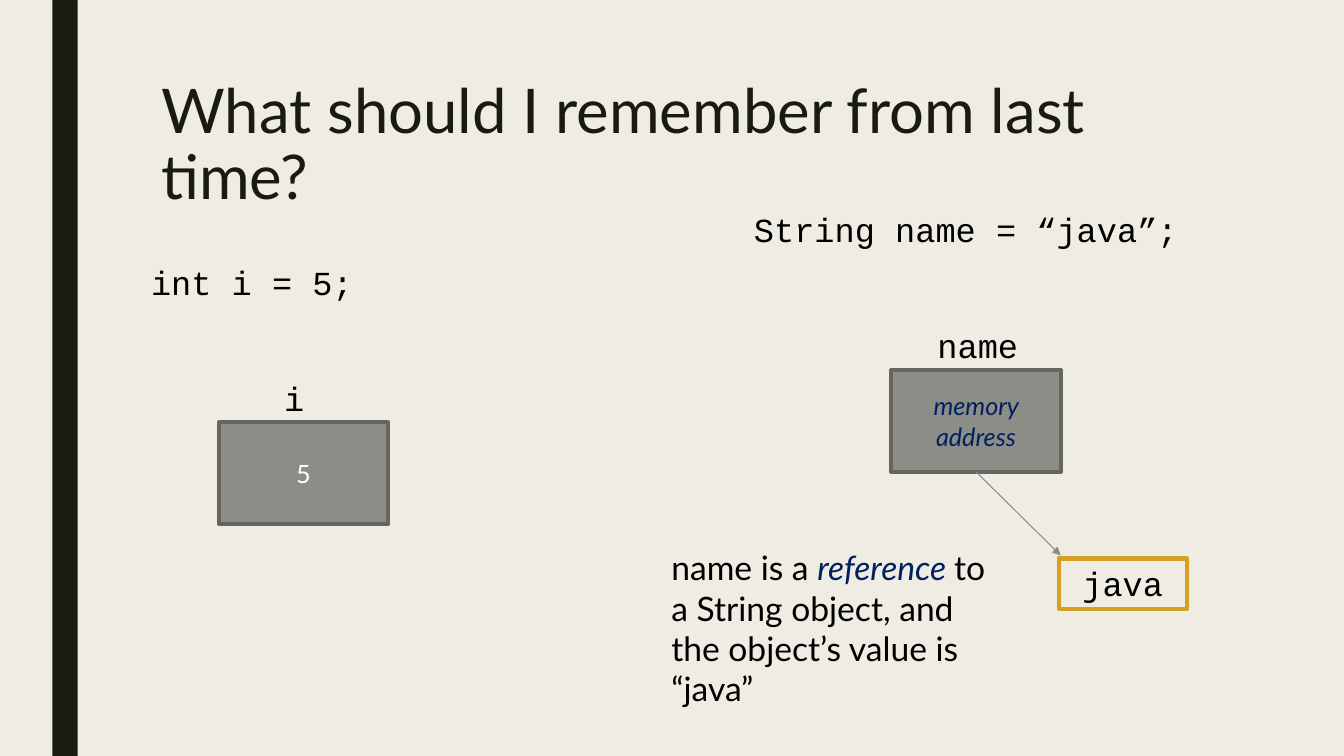
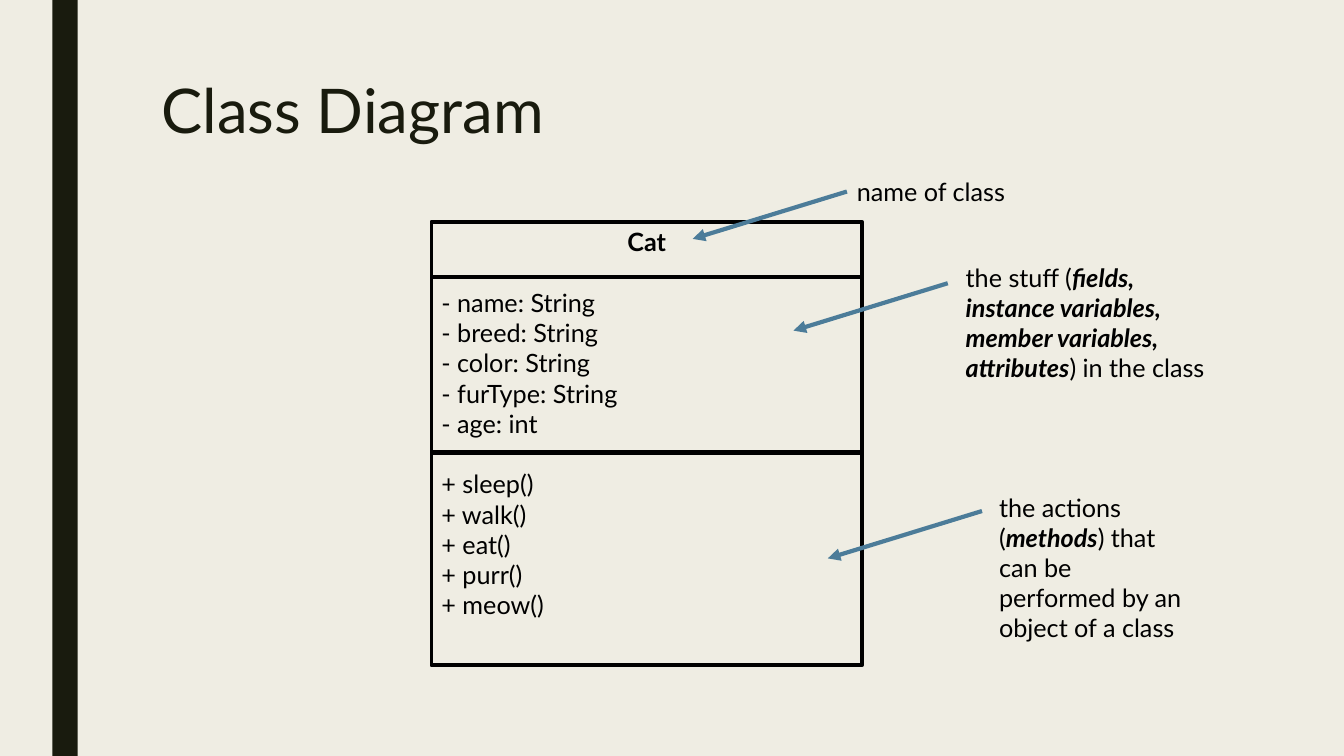
from lxml import etree
from pptx import Presentation
from pptx import util as u
from pptx.dml.color import RGBColor
from pptx.enum import shapes, text
from pptx.oxml.ns import qn

PX = 9144
SLIDE_W, SLIDE_H = 1333, 750
BAND = (52, 0, 25, SLIDE_H)
TITLE = (150, 75, 1050, 162)
SANS, MONO = "Lato", "Courier New"
C = {"paper": "EFEDE3", "dark": "191B0E", "gray": "8C8D86", "edge": "666661",
     "navy": "002060", "gold": "D7A023", "blue": "4C7C99",
     "black": "000000", "white": "FFFFFF"}

CODE_LABELS = [
    ("int i = 5;", (140, 255, 354, 50)),
    ("i", (272, 370, 354, 50)),
    ("name", (920, 317, 354, 50)),
    ("String name = “java”;", (738, 202, 466, 50)),
]
VALUE_BOX = (217, 419, 168, 101)
ADDRESS_BOX = (884, 367, 168, 101)
OBJECT_BOX = (1050, 554, 127, 50)
OBJECT_CORNER = (1052, 551)
REFERENCE_NOTE = (656, 538, 341, 131)
REFERENCE_RUNS = [("name is a ", ""), ("reference ", "i"),
                  ("to a String object, and the object’s value is “java”", "")]

CLASS_BOX = (428, 220, 427, 440)
DIVIDERS = [275, 449]
CLASS_NAME = "Cat"
MEMBERS = [
    ["- name: String", "- breed: String", "- color: String",
     "- furType: String", "- age: int"],
    ["+ sleep()", "+ walk()", "+ eat()", "+ purr()", "+ meow()"],
]
SECTION_GAP = 21.6
ARROW = (-153, 47)
CALLOUTS = [
    ((840, 170, 202, 40), (840, 190), [("name of class", "")]),
    ((948, 255, 259, 131), (940, 281),
     [("the stuff (", ""),
      ("fields, instance variables, member variables, attributes", "bi"),
      (") in the class", "")]),
    ((981, 483, 202, 162), (974, 507),
     [("the actions (", ""), ("methods", "bi"),
      (") that can be performed by an object of a class", "")]),
]


def px(*values):
    return [u.Emu(v * PX) for v in values]


def rgb(name):
    return RGBColor.from_string(C[name])


def style(r, size, font=SANS, color="black", marks=""):
    r.font.size, r.font.name = u.Pt(size), font
    r.font.color.rgb = rgb(color)
    r.font.bold, r.font.italic = "b" in marks, "i" in marks


def write(p, runs, size, font=SANS, color="black", accent=None, align="LEFT"):
    p.alignment = getattr(text.PP_ALIGN, align)
    for words, marks in runs:
        r = p.add_run()
        r.text = words
        style(r, size, font, accent if accent and marks else color, marks)


def label(s, at, runs, size, **look):
    tf = s.shapes.add_textbox(*px(*at)).text_frame
    tf.word_wrap = True
    write(tf.paragraphs[0], runs, size, **look)


def box(s, at, fill=None, line=None, width=2.75, anchor="TOP"):
    sp = s.shapes.add_shape(shapes.MSO_SHAPE.RECTANGLE, *px(*at))
    sp.shadow.inherit = False
    if fill:
        sp.fill.solid()
        sp.fill.fore_color.rgb = rgb(fill)
    else:
        sp.fill.background()
    if line:
        sp.line.color.rgb = rgb(line)
        sp.line.width = u.Pt(width)
    else:
        sp.line.fill.background()
    sp.text_frame.vertical_anchor = getattr(text.MSO_ANCHOR, anchor)
    return sp


def connect(s, start, end, color, width, arrow=False):
    cx = s.shapes.add_connector(shapes.MSO_CONNECTOR.STRAIGHT, *px(*start, *end))
    cx.line.color.rgb = rgb(color)
    cx.line.width = u.Pt(width)
    if arrow:
        etree.SubElement(cx.line._get_or_add_ln(), qn("a:tailEnd"), type="triangle")
    etree.SubElement(cx._element.spPr, qn("a:effectLst"))
    return cx


def new_slide(prs, title):
    s = prs.slides.add_slide(prs.slide_layouts[5])
    box(s, BAND, fill="dark")
    sp = s.shapes.title
    sp.left, sp.top, sp.width, sp.height = px(*TITLE)
    tf = sp.text_frame
    tf.text = title
    tf.word_wrap = True
    tf.auto_size = text.MSO_AUTO_SIZE.NONE
    tf.vertical_anchor = text.MSO_ANCHOR.TOP
    p = tf.paragraphs[0]
    p.alignment = text.PP_ALIGN.LEFT
    p.line_spacing = 0.89
    style(p.runs[0], 44, color="dark")
    return s


def memory_slide(prs):
    s = new_slide(prs, "What should I remember from last time?")
    for at, words, color, marks in [(VALUE_BOX, "5", "white", ""),
                                    (ADDRESS_BOX, "memory address", "navy", "i")]:
        cell = box(s, at, "gray", "edge", anchor="MIDDLE")
        write(cell.text_frame.paragraphs[0], [(words, marks)], 18,
              color=color, align="CENTER")
    for words, at in CODE_LABELS:
        label(s, at, [(words, "")], 24, font=MONO)
    x, y, w, h = ADDRESS_BOX
    pointer = connect(s, (x + w // 2, y + h), OBJECT_CORNER, "gray", 0.75, arrow=True)
    pointer.begin_connect(cell, 2)
    java = box(s, OBJECT_BOX, line="gold", width=3)
    write(java.text_frame.paragraphs[0], [("java", "")], 24, font=MONO, align="CENTER")
    label(s, REFERENCE_NOTE, REFERENCE_RUNS, 24, accent="navy")


def class_slide(prs):
    s = new_slide(prs, "Class Diagram")
    tf = box(s, CLASS_BOX, line="black").text_frame
    write(tf.paragraphs[0], [(CLASS_NAME, "b")], 18, align="CENTER")
    for section in MEMBERS:
        for i, member in enumerate(section):
            p = tf.add_paragraph()
            p.space_before = u.Pt(0 if i else SECTION_GAP)
            write(p, [(member, "")], 18)
    left, right = CLASS_BOX[0], CLASS_BOX[0] + CLASS_BOX[2]
    for y in DIVIDERS:
        connect(s, (left, y), (right, y), "black", 3)
    for at, (x, y), runs in CALLOUTS:
        connect(s, (x, y), (x + ARROW[0], y + ARROW[1]), "blue", 3, arrow=True)
        label(s, at, runs, 18)


def main():
    prs = Presentation()
    prs.slide_width, prs.slide_height = px(SLIDE_W, SLIDE_H)
    fill = prs.slide_master.background.fill
    fill.solid()
    fill.fore_color.rgb = rgb("paper")
    memory_slide(prs)
    class_slide(prs)
    prs.save("out.pptx")


if __name__ == "__main__":
    main()
